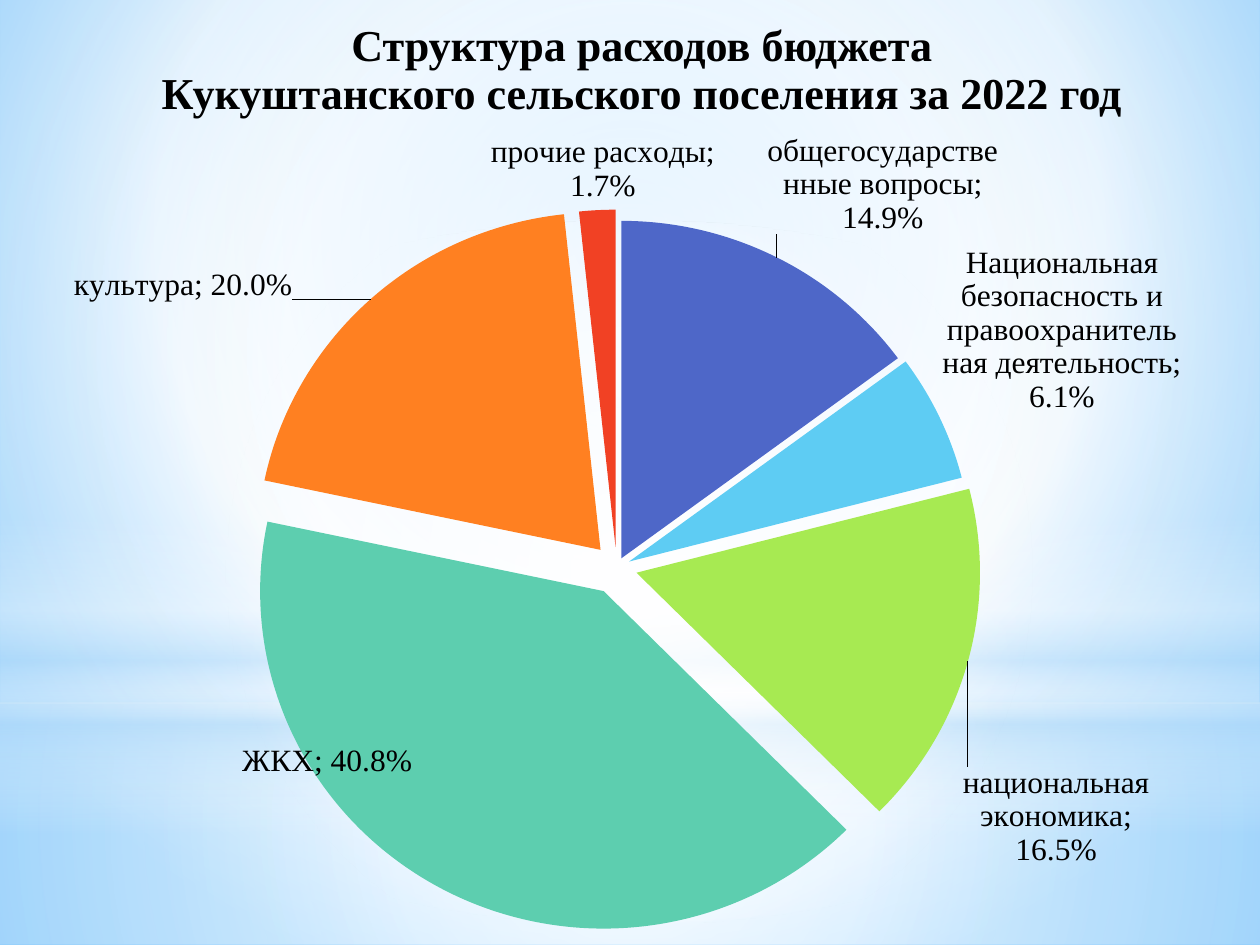
from copy import deepcopy
from dataclasses import dataclass

from lxml import etree
from pptx import Presentation
from pptx.chart.data import CategoryChartData
from pptx.dml.color import RGBColor
from pptx.enum.chart import XL_CHART_TYPE, XL_LABEL_POSITION
from pptx.enum.shapes import MSO_SHAPE
from pptx.enum.text import MSO_ANCHOR, MSO_AUTO_SIZE, PP_ALIGN
from pptx.oxml import parse_xml
from pptx.oxml.ns import qn
from pptx.util import Pt

PIE = XL_CHART_TYPE.PIE
OUTSIDE = XL_LABEL_POSITION.OUTSIDE_END
RECT, ELLIPSE = MSO_SHAPE.RECTANGLE, MSO_SHAPE.OVAL
MIDDLE, CENTER, NO_FIT = MSO_ANCHOR.MIDDLE, PP_ALIGN.CENTER, MSO_AUTO_SIZE.NONE
DRAWING_NS = "http://schemas.openxmlformats.org/drawingml/2006/main"
CENTER_FOCUS = (50, 50, 50, 50)


@dataclass(frozen=True)
class Theme:
    text: str = "000000"
    white: str = "FFFFFF"
    mist: str = "B4DCFA"
    sky: str = "9ED5FF"
    azure: str = "5BB9FF"
    title_font: str = "Times New Roman"
    chart_font: str = "Cabin"
    title_size: float = 25.2
    label_size: float = 18


THEME = Theme()


@dataclass(frozen=True)
class Stop:
    position: int
    color: str
    opacity: int = 100


@dataclass(frozen=True)
class Glow:
    preset: int
    top: float
    height: float
    stops: tuple
    focus: tuple | None = CENTER_FOCUS  # None makes a vertical gradient


@dataclass(frozen=True)
class Slice:
    name: str
    share: float
    color: str
    explosion: int
    label_shift: tuple  # fractions of the chart size


BACKDROP = (Stop(0, THEME.sky), Stop(60, THEME.white), Stop(100, THEME.azure))

GLOWS = (
    Glow(RECT, 401.76, 138.24, (Stop(0, THEME.white, 91), Stop(37, THEME.white, 76),
                                Stop(100, THEME.mist, 79))),
    Glow(RECT, 0, 401.76, (Stop(0, THEME.white, 89), Stop(48, THEME.white, 62),
                           Stop(100, THEME.mist, 79))),
    Glow(RECT, 296.64, 180, (Stop(0, THEME.white, 0), Stop(29, THEME.white, 30),
                             Stop(45, THEME.mist, 40), Stop(55, THEME.white, 26),
                             Stop(65, THEME.mist, 60), Stop(100, THEME.white, 0)), None),
    Glow(ELLIPSE, 126, 401.76, (Stop(0, THEME.white), Stop(56, THEME.white, 0))),
)

SLICES = (
    Slice("общегосударственные вопросы", 0.149, "4E67C8", 3, (-0.01, -0.02)),
    Slice("Национальная безопасность и правоохранительная деятельность",
          0.061, "5ECCF3", 4, (-0.003, 0)),
    Slice("национальная экономика", 0.165, "A7EA52", 6, (-0.01, 0.13)),
    Slice("ЖКХ", 0.408, "5DCEAF", 8, (-0.02, -0.19)),
    Slice("культура", 0.2, "FF8021", 7, (-0.06, 0.01)),
    Slice("прочие расходы", 0.017, "F14124", 6, (0.005, 0)),
)


def gradient(stops: tuple, focus: tuple | None):
    """Gradient fill, circular around a focus or vertical without one."""
    marks = "".join(
        f'<a:gs pos="{stop.position * 1000}"><a:srgbClr val="{stop.color}">'
        f'<a:alpha val="{stop.opacity * 1000}"/></a:srgbClr></a:gs>' for stop in stops)
    if focus is None:
        course = '<a:lin ang="5400000" scaled="0"/>'
    else:
        sides = " ".join(f'{side}="{value * 1000}"' for side, value in zip("ltrb", focus))
        course = f'<a:path path="circle"><a:fillToRect {sides}/></a:path>'
    return parse_xml(f'<a:gradFill xmlns:a="{DRAWING_NS}" rotWithShape="1">'
                     f"<a:gsLst>{marks}</a:gsLst>{course}</a:gradFill>")


def swap_solid_fill(owner, fill) -> None:
    solid = owner.find(qn("a:solidFill"))
    owner.replace(solid, fill)


def format_font(font, *, name: str, size: float, bold: bool = False) -> None:
    font.name, font.size, font.bold = name, Pt(size), bold
    font.color.rgb = RGBColor.from_string(THEME.text)


def chart_node(tag: str, value=None):
    node = etree.Element(qn(f"c:{tag}"))
    if value is not None:
        node.set("val", str(value))
    return node


def manual_layout(**settings):
    layout = chart_node("layout")
    manual = etree.SubElement(layout, qn("c:manualLayout"))
    for tag, value in settings.items():
        manual.append(chart_node(tag, value))
    return layout


def draw_background(page) -> None:
    page.background.fill.solid()
    page.background.fill.fore_color.rgb = RGBColor.from_string(THEME.sky)
    owner = page.element.find(f".//{qn('p:bgPr')}")
    swap_solid_fill(owner, gradient(BACKDROP, (20, 10, 20, 60)))


def draw_glow(page, glow: Glow) -> None:
    box = page.shapes.add_shape(glow.preset, Pt(0), Pt(glow.top), Pt(720), Pt(glow.height))
    box.shadow.inherit = False
    box.line.fill.background()
    box.fill.solid()
    swap_solid_fill(box.element.spPr, gradient(glow.stops, glow.focus))
    page.shapes.title.element.addprevious(box.element)


def draw_title(page, lines: tuple) -> None:
    title = page.shapes.title
    title.left, title.top, title.width, title.height = Pt(25.2), Pt(9.36), Pt(683.28), Pt(62.64)
    frame = title.text_frame
    frame.auto_size, frame.vertical_anchor, frame.word_wrap = NO_FIT, MIDDLE, True
    frame.text = "\n".join(lines)
    for para in frame.paragraphs:
        para.alignment, para.line_spacing = CENTER, 0.9
        para.space_before = Pt(0)
        for span in para.runs:
            format_font(span.font, name=THEME.title_font, size=THEME.title_size, bold=True)


def place_labels(series) -> None:
    labels = series.data_labels
    labels.show_value = labels.show_category_name = True
    labels.show_percentage = labels.show_legend_key = False
    labels.number_format, labels.number_format_is_linked = "0.0%", False
    labels.position = OUTSIDE
    format_font(labels.font, name=THEME.title_font, size=THEME.label_size)

    group = series._element.find(qn("c:dLbls"))
    for leader in group.findall(qn("c:showLeaderLines")):
        group.remove(leader)
    separator = chart_node("separator")
    separator.text = "; "
    group.append(separator)
    shared = list(group)
    group.append(chart_node("showLeaderLines", 1))
    for index, part in enumerate(SLICES):
        label = chart_node("dLbl")
        across, down = part.label_shift
        label.append(chart_node("idx", index))
        label.append(manual_layout(x=across, y=down))
        label.extend(deepcopy(node) for node in shared)
        group.insert(index, label)


def draw_pie(page) -> None:
    data = CategoryChartData(number_format="0.0%")
    data.categories = [part.name for part in SLICES]
    data.add_series("Series 1", [part.share for part in SLICES])
    chart = page.shapes.add_chart(PIE, Pt(14.4), Pt(71.28), Pt(694.8), Pt(459.36), data).chart
    chart.has_legend = chart.has_title = False
    format_font(chart.font, name=THEME.chart_font, size=THEME.label_size)
    plot = chart.plots[0]
    plot.vary_by_categories = True
    series = plot.series[0]

    # Slice colours and distances from the centre
    for index, part in enumerate(SLICES):
        look = series.points[index].format
        look.fill.solid()
        look.fill.fore_color.rgb = RGBColor.from_string(part.color)
        look.line.fill.background()
    for point, part in zip(series._element.findall(qn("c:dPt")), SLICES):
        point.find(qn("c:spPr")).addprevious(chart_node("explosion", part.explosion))
    place_labels(series)

    # Plot area inside the chart
    area = chart._chartSpace.find(f".//{qn('c:plotArea')}")
    for layout in area.findall(qn("c:layout")):
        area.remove(layout)
    area.insert(0, manual_layout(layoutTarget="inner", xMode="edge", yMode="edge",
                                 x=0.204, y=0.123, w=0.565, h=0.875))


def main() -> None:
    deck = Presentation()
    deck.slide_width, deck.slide_height = Pt(720), Pt(540)
    page = deck.slides.add_slide(deck.slide_layouts[5])
    draw_background(page)
    for glow in GLOWS:
        draw_glow(page, glow)
    draw_title(page, ("Структура расходов бюджета",
                      "Кукуштанского сельского поселения за 2022 год"))
    draw_pie(page)
    deck.save("out.pptx")


if __name__ == "__main__":
    main()
